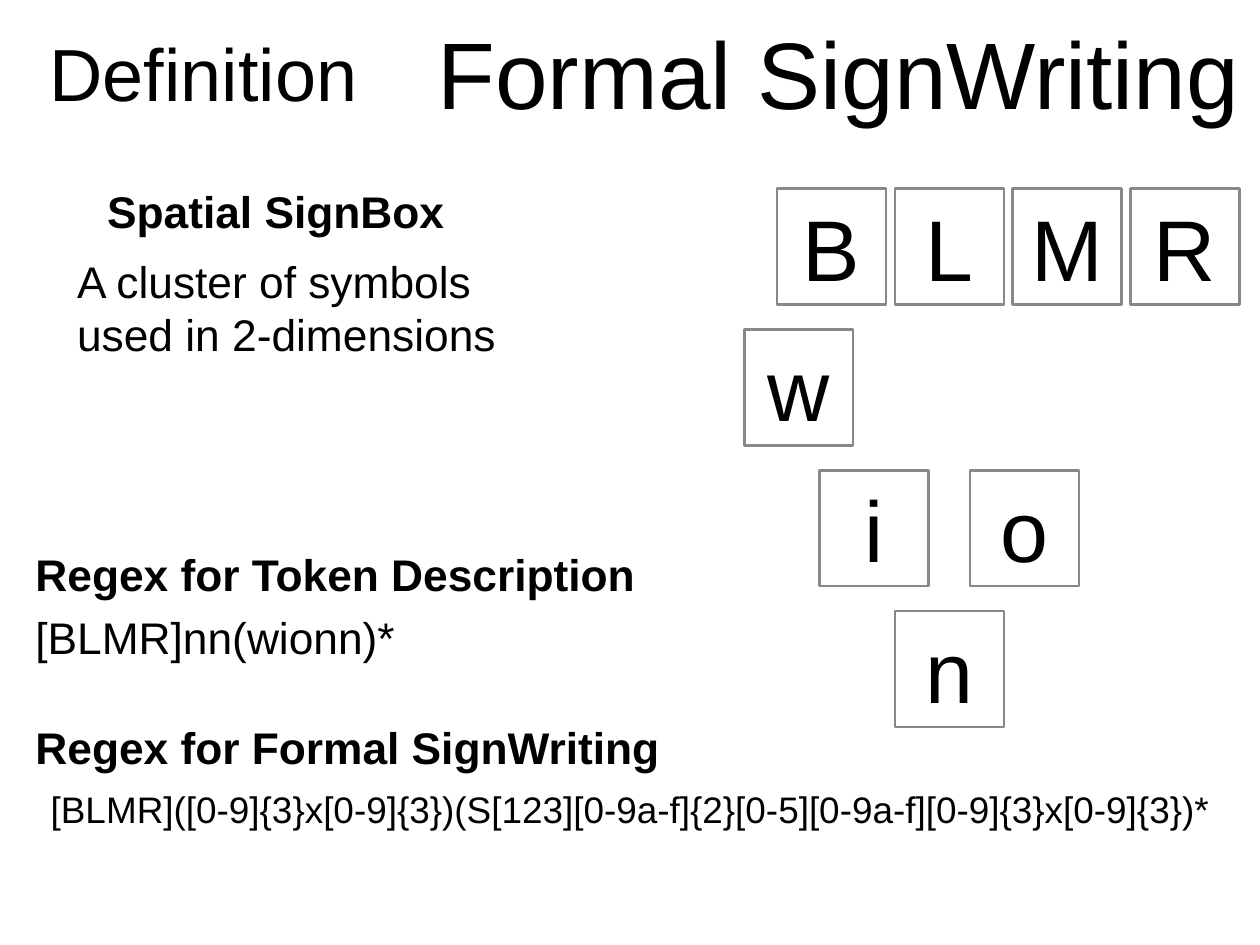
import dataclasses

import pptx
import pptx.dml.color
import pptx.enum.shapes
import pptx.enum.text
import pptx.util

ALIGN = pptx.enum.text.PP_ALIGN
ANCHOR = pptx.enum.text.MSO_ANCHOR
PX = 9144  # EMU in one px, at 100 px to the inch


@dataclasses.dataclass(frozen=True)
class Theme:
    font: str = "Arial"
    text: str = "000000"
    background: str = "FFFFFF"
    tile_line: str = "85888D"
    tile_line_width: int = 2
    section_size: int = 60
    headline_size: float = 76.8
    body_size: int = 36
    pattern_size: int = 30
    tile_size: int = 70


THEME = Theme()


def color(value):
    return pptx.dml.color.RGBColor.from_string(value)


def emu(*lengths):
    return [pptx.util.Emu(length * PX) for length in lengths]


def write(shape, text, size, bold=False, align=ALIGN.LEFT, anchor=ANCHOR.MIDDLE, inset=0):
    frame = shape.text_frame
    frame.text = text
    frame.word_wrap = True
    frame.auto_size = pptx.enum.text.MSO_AUTO_SIZE.NONE
    frame.vertical_anchor = anchor
    frame.margin_left, frame.margin_top, frame.margin_right, frame.margin_bottom = emu(*[inset] * 4)
    paragraph = frame.paragraphs[0]
    paragraph.alignment = align
    paragraph.font.name = THEME.font
    paragraph.font.size = pptx.util.Pt(size)
    paragraph.font.bold = bold
    paragraph.font.color.rgb = color(THEME.text)


def add_text(slide, box, text, size, **style):
    write(slide.shapes.add_textbox(*emu(*box)), text, size, **style)


def add_header(slide, left, top, height):
    title = slide.shapes.title
    title.left, title.top, title.width, title.height = emu(left, top, 575, height)
    write(title, "Definition", THEME.section_size)
    add_text(slide, (left + 428, top, 925, height), "Formal SignWriting",
             THEME.headline_size, align=ALIGN.CENTER)


def add_definition(slide, left, top):
    add_text(slide, (left + 28, top, 457, 71), "Spatial SignBox",
             THEME.body_size, bold=True, inset=6)
    add_text(slide, (left, top + 85, 523, 131), "A cluster of symbols used in 2-dimensions",
             THEME.body_size, anchor=ANCHOR.TOP)


def add_patterns(slide, left, top):
    lines = [
        (0, "Regex for Token Description", True),
        (71, "[BLMR]nn(wionn)*", False),
        (196, "Regex for Formal SignWriting", True),
    ]
    for offset, text, bold in lines:
        add_text(slide, (left, top + offset, 760, 71), text,
                 THEME.body_size, bold=bold, inset=6)
    add_text(slide, (left - 12, top + 271, 1379, 61),
             "[BLMR]([0-9]{3}x[0-9]{3})(S[123][0-9a-f]{2}[0-5][0-9a-f][0-9]{3}x[0-9]{3})*",
             THEME.pattern_size, align=ALIGN.CENTER, inset=6)


def add_tile(slide, left, top, letter):
    tile = slide.shapes.add_shape(pptx.enum.shapes.MSO_SHAPE.RECTANGLE,
                                  *emu(left, top, 123, 131))
    tile.shadow.inherit = False
    tile.fill.background()
    tile.line.color.rgb = color(THEME.tile_line)
    tile.line.width = pptx.util.Pt(THEME.tile_line_width)
    write(tile, letter, THEME.tile_size, align=ALIGN.CENTER)


def add_token_tiles(slide, left, top):
    """Place a row of box tokens, then the symbol tokens in half steps around L."""
    pitch, half_step, row_step = 133, 85, 159
    for column, letter in enumerate("BLMR"):
        add_tile(slide, left + column * pitch, top, letter)
    for letter, step, row in [("w", -2, 1), ("i", -1, 2), ("o", 1, 2), ("n", 0, 3)]:
        add_tile(slide, left + pitch + step * half_step, top + row * row_step, letter)


def main():
    presentation = pptx.Presentation()
    presentation.slide_width, presentation.slide_height = emu(1422, 1067)
    slide = presentation.slides.add_slide(presentation.slide_layouts.get_by_name("Title Only"))
    slide.background.fill.solid()
    slide.background.fill.fore_color.rgb = color(THEME.background)
    add_header(slide, 56, 11, 140)
    add_definition(slide, 87, 202)
    add_patterns(slide, 34, 612)
    add_token_tiles(slide, 877, 213)
    presentation.save("out.pptx")


if __name__ == "__main__":
    main()
